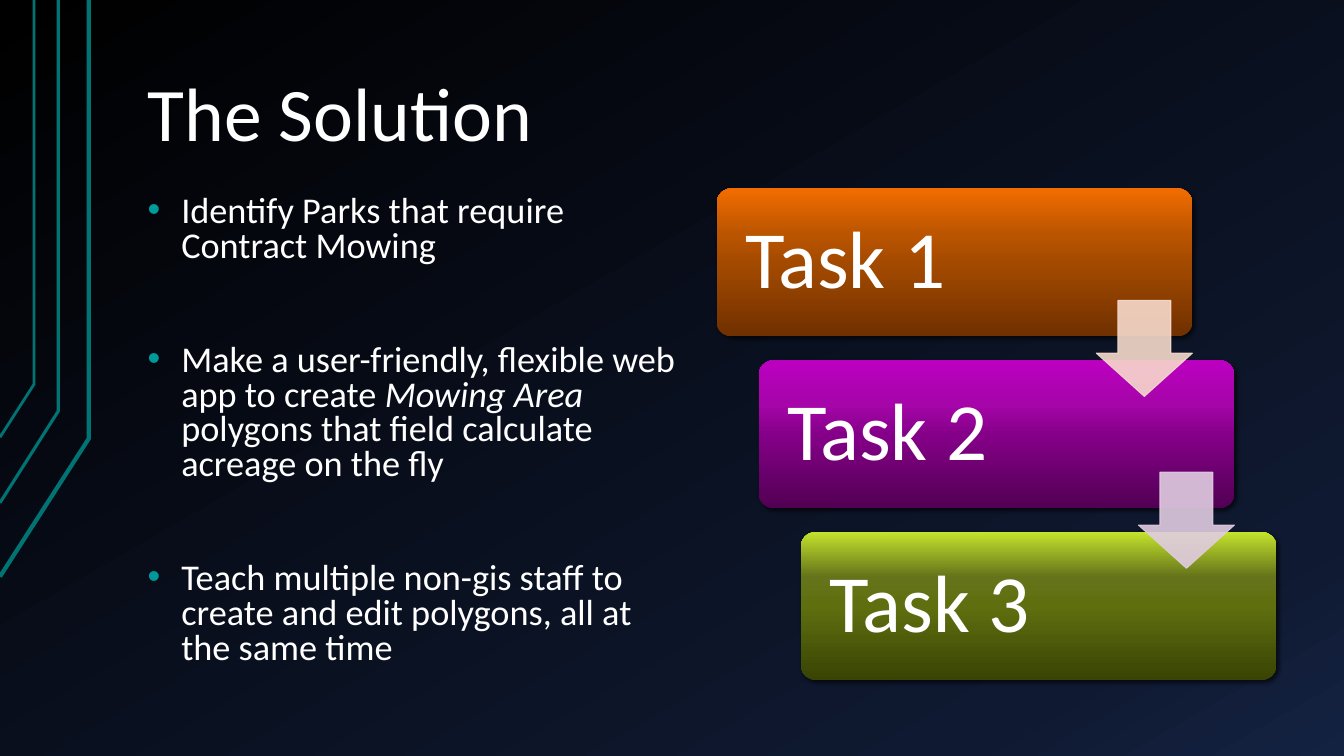
from pptx import Presentation
from pptx.dml.color import RGBColor
from pptx.enum import shapes, text
from pptx.oxml import ns
from pptx.util import Cm, Pt
from lxml import etree

FONT = "Calibri"
WHITE = RGBColor(0xFF, 0xFF, 0xFF)
BLACK = RGBColor(0, 0, 0)
TEAL = RGBColor(0, 0x73, 0x73)
BULLET = RGBColor(0, 0x99, 0x99)


def stops(positions, colors):
    return [(pos, RGBColor.from_string(c)) for pos, c in zip(positions, colors.split())]


BACKDROP = stops((0, 85, 100), "000000 0F1931 142242")
TASK_POSITIONS = (0, 50, 70, 100)
ORANGE = stops(TASK_POSITIONS, "703000 A44A00 BC5500 F26D00")
PURPLE = stops(TASK_POSITIONS, "520054 850088 A505A9 BC00C0")
GREEN = stops(TASK_POSITIONS, "394404 5F6F0F 65741A C4E32D")
PEACH = RGBColor(0xF7, 0xDA, 0xCC)
LILAC = RGBColor(0xE0, 0xCC, 0xE1)

RAILS = [(2.24, 11.05, 14.53, 3), (1.47, 10.36, 12.67, 2.25), (0.86, 9.68, 11.02, 2)]
BULLETS = [
    [("Identify Parks that require Contract Mowing", False)],
    [("Make a user-friendly, flexible web app to create ", False),
     ("Mowing Area ", True),
     ("polygons that field calculate acreage on the fly", False)],
    [("Teach multiple non-gis staff to create and edit polygons, all at the same time", False)],
]
TASKS = [("Task 1", ORANGE), ("Task 2", PURPLE), ("Task 3", GREEN)]


def add(parent, tag, **attrs):
    return etree.SubElement(parent, ns.qn(tag), {k: str(v) for k, v in attrs.items()})


def set_gradient(fill, element, colors, angle):
    fill.gradient()
    grad = next(element.iter(ns.qn("a:gradFill")))
    for child in list(grad):
        grad.remove(child)
    gs_list = add(grad, "a:gsLst")
    for pos, color in colors:
        add(add(gs_list, "a:gs", pos=pos * 1000), "a:srgbClr", val=color)
    add(grad, "a:lin", ang=angle * 60000, scaled=0)


def set_shadow(sp):
    sp.shadow.inherit = False
    effects = sp.element.spPr.find(ns.qn("a:effectLst"))
    outer = add(effects, "a:outerShdw", blurRad=Pt(3), dist=Pt(2),
                dir=45 * 60000, algn="ctr", rotWithShape=0)
    add(add(outer, "a:srgbClr", val=BLACK), "a:alpha", val=60000)


def set_frame(tf, anchor, dx, dy):
    tf.word_wrap = True
    tf.vertical_anchor = anchor
    tf.margin_left = tf.margin_right = Cm(dx)
    tf.margin_top = tf.margin_bottom = Cm(dy)


def add_run(p, words, size, italic=False):
    r = p.add_run()
    r.text = words
    r.font.name = FONT
    r.font.size = Pt(size)
    r.font.italic = italic
    r.font.color.rgb = WHITE


def add_rails(s, left, top):
    for x, bend, end, weight in RAILS:
        builder = s.shapes.build_freeform(Cm(left), Cm(top + end))
        builder.add_line_segments(
            [(Cm(left + x), Cm(top + bend)), (Cm(left + x), Cm(top))], close=False)
        sp = builder.convert_to_shape()
        sp.shadow.inherit = False
        sp.fill.background()
        sp.line.color.rgb = TEAL
        sp.line.width = Pt(weight)


def add_title(s, left, top, width, height):
    tf = s.shapes.add_textbox(Cm(left), Cm(top), Cm(width), Cm(height)).text_frame
    set_frame(tf, text.MSO_ANCHOR.BOTTOM, 0.34, 0.18)
    p = tf.paragraphs[0]
    p.line_spacing = 0.9
    add_run(p, "The Solution", 54)


def add_bullets(s, left, top, width, height):
    tf = s.shapes.add_textbox(Cm(left), Cm(top), Cm(width), Cm(height)).text_frame
    set_frame(tf, text.MSO_ANCHOR.TOP, 0.34, 0.18)
    for i, runs in enumerate(BULLETS):
        p = tf.add_paragraph() if i else tf.paragraphs[0]
        p.line_spacing = 0.8
        if i:
            p.space_before = Pt(56.5)
        pPr = p._p.get_or_add_pPr()
        pPr.set("marL", str(Cm(0.85)))
        pPr.set("indent", str(-Cm(0.85)))
        add(add(pPr, "a:buClr"), "a:srgbClr", val=BULLET)
        add(pPr, "a:buFont", typeface="Arial")
        add(pPr, "a:buChar", char="•")
        for words, italic in runs:
            add_run(p, words, 25.9, italic)


def add_task(s, left, top, width, height, label, colors):
    sp = s.shapes.add_shape(shapes.MSO_SHAPE.ROUNDED_RECTANGLE,
                            Cm(left), Cm(top), Cm(width), Cm(height))
    sp.adjustments[0] = 0.1
    set_gradient(sp.fill, sp.element, colors, 270)
    sp.line.fill.background()
    set_shadow(sp)
    set_frame(sp.text_frame, text.MSO_ANCHOR.MIDDLE, 0.61, 0.61)
    p = sp.text_frame.paragraphs[0]
    p.alignment = text.PP_ALIGN.LEFT
    p.line_spacing = 0.9
    add_run(p, label, 58)


def add_arrow(s, left, top, size, color):
    sp = s.shapes.add_shape(shapes.MSO_SHAPE.DOWN_ARROW,
                            Cm(left), Cm(top), Cm(size), Cm(size))
    sp.adjustments[0] = 0.55
    sp.adjustments[1] = 0.45
    sp.shadow.inherit = False
    sp.fill.solid()
    sp.fill.fore_color.rgb = color
    sp.line.color.rgb = color
    sp.line.width = Pt(0.75)
    for clr in sp.element.spPr.iter(ns.qn("a:srgbClr")):
        add(clr, "a:alpha", val=90000)


def add_staircase(s, left, top, width, height):
    task_w, task_h, arrow = 11.99, 3.73, 2.42
    dx = (width - task_w) / (len(TASKS) - 1)
    dy = (height - task_h) / (len(TASKS) - 1)
    for i, (label, colors) in enumerate(TASKS):
        add_task(s, left + i * dx, top + i * dy, task_w, task_h, label, colors)
    for i, color in enumerate((PEACH, LILAC)):
        add_arrow(s, left + i * dx + task_w - arrow, top + i * dy + 2.82, arrow, color)


def main():
    prs = Presentation()
    prs.slide_width, prs.slide_height = Cm(33.87), Cm(19.05)
    s = prs.slides.add_slide(prs.slide_layouts[6])
    set_gradient(s.background.fill, s.element, BACKDROP, 60)
    add_rails(s, 0, 0)
    add_title(s, 3.38, 0.76, 28.78, 3.4)
    add_bullets(s, 3.38, 4.75, 14.1, 12.4)
    add_staircase(s, 18.06, 4.75, 14.11, 12.39)
    prs.save("out.pptx")


if __name__ == "__main__":
    main()
